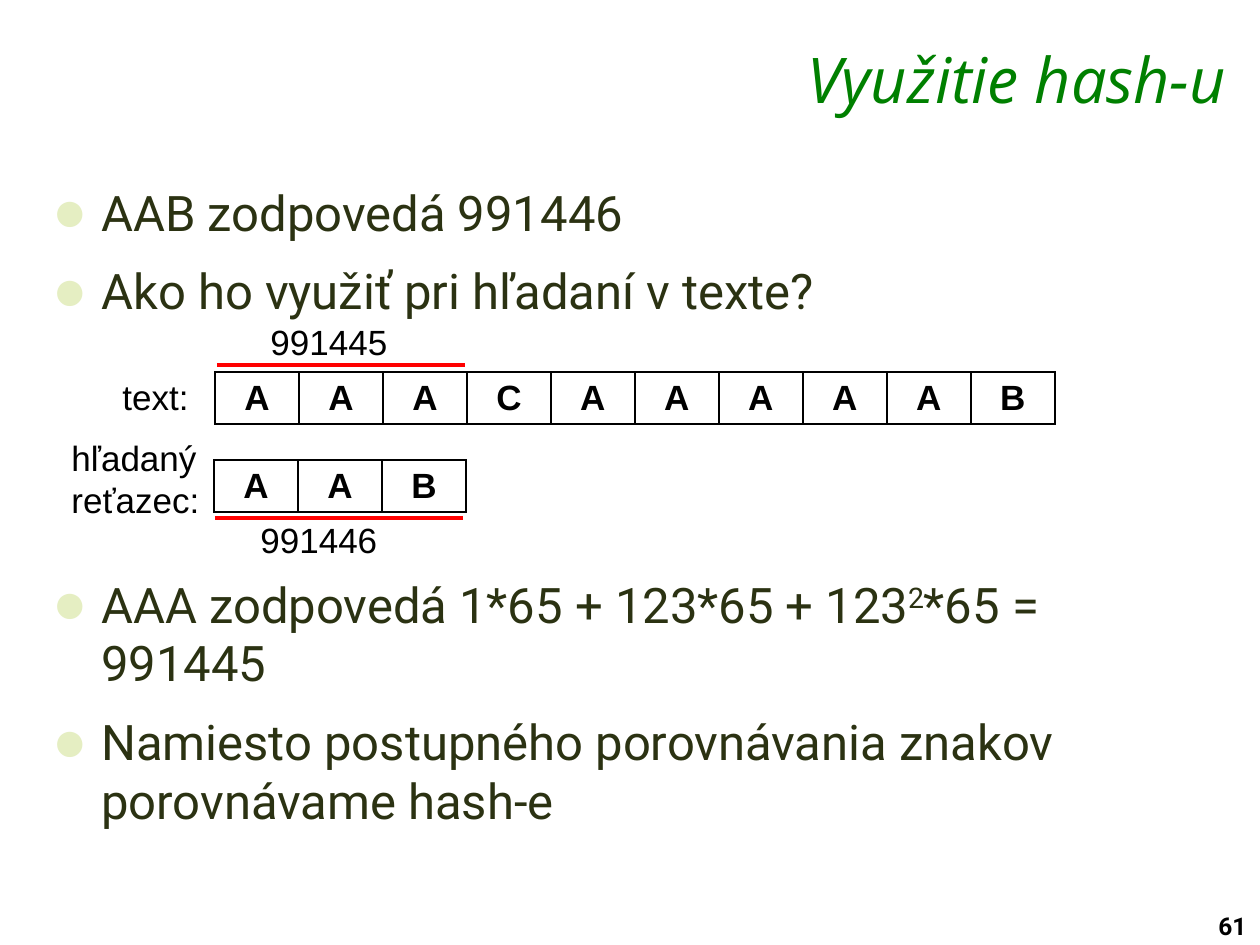
from lxml import etree
from pptx import Presentation
from pptx.dml.color import RGBColor
from pptx.enum.shapes import MSO_CONNECTOR
from pptx.enum.text import MSO_ANCHOR, PP_ALIGN
from pptx.oxml.ns import qn
from pptx.util import Emu, Pt

BLACK = RGBColor(0x00, 0x00, 0x00)
WHITE = RGBColor(0xFF, 0xFF, 0xFF)
RED = RGBColor(0xFF, 0x00, 0x00)
GREEN = RGBColor(0x00, 0x80, 0x00)
OLIVE = RGBColor(0x2B, 0x32, 0x12)
PALE_LIME = RGBColor(0xE5, 0xEE, 0xC2)

LEFT, CENTER, RIGHT = PP_ALIGN.LEFT, PP_ALIGN.CENTER, PP_ALIGN.RIGHT
TOP, MIDDLE = MSO_ANCHOR.TOP, MSO_ANCHOR.MIDDLE
STRAIGHT = MSO_CONNECTOR.STRAIGHT

PX_PER_INCH = 126
CELL_WIDTH, CELL_HEIGHT = 84, 52


def px(length):
    return Emu(round(length * 914400 / PX_PER_INCH))


class HashSlide:
    """Holds the slide and its style, with a method for each kind of element."""

    label_font, body_font, title_font = "Arial", "Roboto", "Open Sans"
    label_size, body_size, title_size = 20, 28, 36

    def __init__(self, deck):
        self.slide = deck.slides.add_slide(deck.slide_layouts[5])

    def text_run(self, paragraph, text, font, size, color, bold=False, italic=False):
        run = paragraph.add_run()
        run.text = text
        run.font.name, run.font.size = font, Pt(size)
        run.font.bold, run.font.italic = bold, italic
        run.font.color.rgb = color
        return run

    def title(self, text, left, top, width, height):
        heading = self.slide.shapes.title
        heading.left, heading.top = px(left), px(top)
        heading.width, heading.height = px(width), px(height)
        frame = heading.text_frame
        frame.vertical_anchor = TOP
        frame.margin_top = px(2)
        paragraph = frame.paragraphs[0]
        paragraph.alignment = RIGHT
        self.text_run(paragraph, text, self.title_font, self.title_size, GREEN, italic=True)

    def box(self, left, top, width, height, wrap):
        area = self.slide.shapes.add_textbox(px(left), px(top), px(width), px(height))
        area.text_frame.word_wrap = wrap
        return area.text_frame

    def paragraphs(self, frame, items):
        for index, item in enumerate(items):
            yield (frame.add_paragraph() if index else frame.paragraphs[0]), item

    def label(self, lines, left, top, width, height):
        frame = self.box(left, top, width, height, False)
        for paragraph, line in self.paragraphs(frame, lines):
            paragraph.alignment = LEFT
            self.text_run(paragraph, line, self.label_font, self.label_size, BLACK)

    def page_number(self, text, left, top, width, height):
        frame = self.box(left, top, width, height, False)
        self.text_run(frame.paragraphs[0], text, self.body_font, 14, BLACK, bold=True)

    def bullets(self, points, left, top, width, height):
        frame = self.box(left, top, width, height, True)
        for paragraph, parts in self.paragraphs(frame, points):
            self.add_bullet(paragraph)
            gap = Pt(self.body_size * 0.2)
            paragraph.space_after = gap
            if parts is not points[0]:
                paragraph.space_before = gap
            for text, baseline in parts:
                run = self.text_run(paragraph, text, self.body_font, self.body_size, OLIVE)
                if baseline:
                    run._r.get_or_add_rPr().set("baseline", str(baseline * 1000))

    def add_bullet(self, paragraph):
        properties = paragraph._p.get_or_add_pPr()
        indent = px(49)
        properties.set("marL", str(indent))
        properties.set("indent", str(-indent))
        color = etree.SubElement(properties, qn("a:buClr"))
        etree.SubElement(color, qn("a:srgbClr"), val=str(PALE_LIME))
        etree.SubElement(properties, qn("a:buSzPct"), val="120000")
        etree.SubElement(properties, qn("a:buFont"), typeface=self.label_font)
        etree.SubElement(properties, qn("a:buChar"), char="●")

    def letters(self, word, left, top):
        grid = self.slide.shapes.add_table(
            1, len(word), px(left), px(top), px(CELL_WIDTH * len(word)), px(CELL_HEIGHT)
        ).table
        grid.first_row = grid.horz_banding = False
        grid.rows[0].height = px(CELL_HEIGHT)
        for column, letter in enumerate(word):
            grid.columns[column].width = px(CELL_WIDTH)
            cell = grid.cell(0, column)
            cell.margin_top = cell.margin_bottom = 0
            cell.vertical_anchor = MIDDLE
            paragraph = cell.text_frame.paragraphs[0]
            paragraph.alignment = CENTER
            self.text_run(paragraph, letter, self.label_font, self.label_size, BLACK, bold=True)
            self.add_borders(cell)
            cell.fill.solid()
            cell.fill.fore_color.rgb = WHITE

    def add_borders(self, cell):
        properties = cell._tc.get_or_add_tcPr()
        for side in ("a:lnL", "a:lnR", "a:lnT", "a:lnB"):
            border = etree.SubElement(properties, qn(side), w=str(Pt(1)))
            fill = etree.SubElement(border, qn("a:solidFill"))
            etree.SubElement(fill, qn("a:srgbClr"), val=str(BLACK))

    def marker(self, left, top, length):
        line = self.slide.shapes.add_connector(
            STRAIGHT, px(left), px(top), px(left + length), px(top)
        )
        line.line.color.rgb = RED
        line.line.width = Pt(2)
        etree.SubElement(line._element.spPr, qn("a:effectLst"))


def main():
    deck = Presentation()
    deck.slide_width, deck.slide_height = px(1260), px(945)
    page = HashSlide(deck)

    page.page_number("61", 1206, 905, 64, 42)
    page.title("Využitie hash-u", 288, 39, 951, 73)
    page.bullets(
        [[("AAB zodpovedá 991446", 0)], [("Ako ho využiť pri hľadaní v texte?", 0)]],
        40, 176, 1182, 160,
    )
    page.bullets(
        [
            [("AAA zodpovedá 1*65 + 123*65 + 123", 0), ("2", 30), ("*65 = 991445", 0)],
            [("Namiesto postupného porovnávania znakov porovnávame hash-e", 0)],
        ],
        40, 568, 1182, 339,
    )

    page.letters("AAACAAAAAB", 215, 372)
    page.letters("AAB", 214, 460)
    page.label(["text:"], 110, 369, 92, 55)
    page.label(["hľadaný", "reťazec:"], 59, 430, 158, 97)
    page.label(["991446"], 248, 512, 144, 55)
    page.label(["991445"], 258, 314, 144, 55)
    page.marker(217, 365, 248)
    page.marker(215, 518, 248)

    deck.save("out.pptx")


if __name__ == "__main__":
    main()
